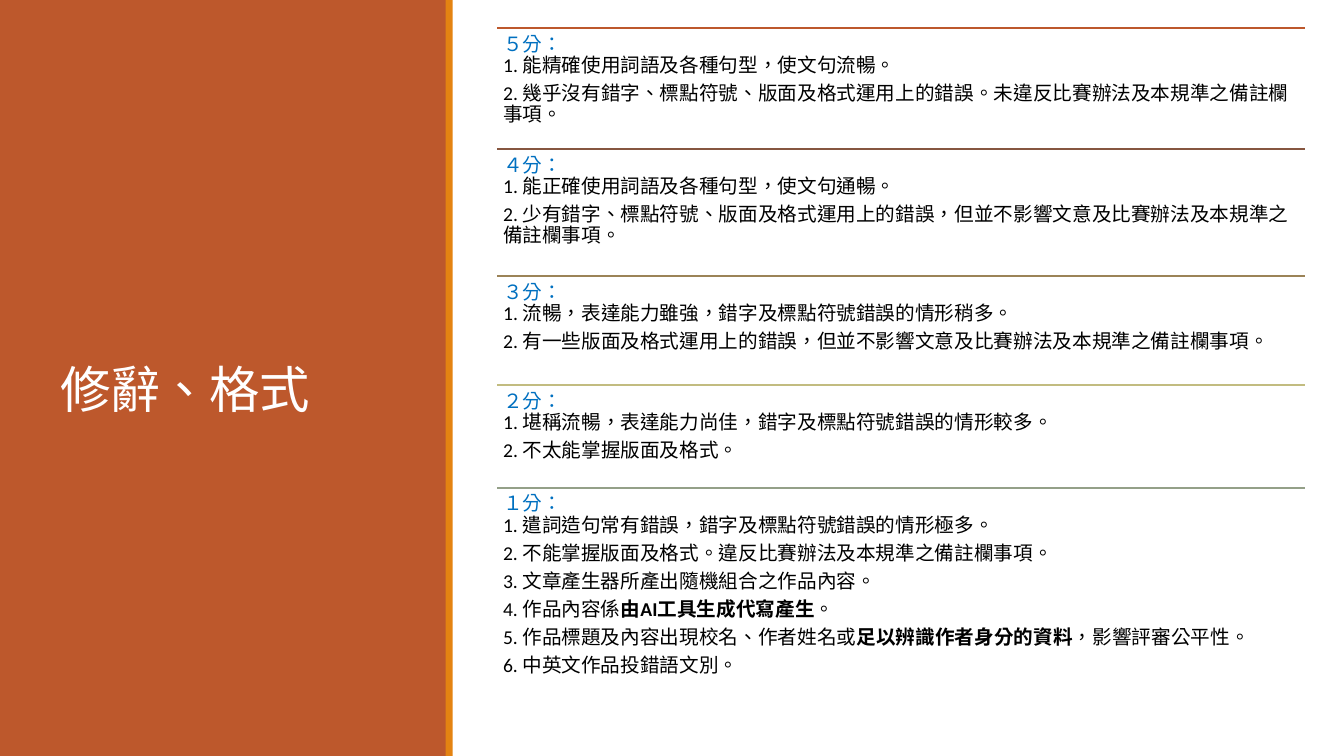
from dataclasses import dataclass

from lxml.etree import SubElement
from pptx import Presentation
from pptx.dml.color import RGBColor
from pptx.enum.shapes import MSO_CONNECTOR, MSO_SHAPE
from pptx.enum.text import MSO_ANCHOR
from pptx.oxml.ns import qn
from pptx.slide import Slide
from pptx.util import Emu, Pt

EMU_PER_PX = 9144
SLIDE_WIDTH, SLIDE_HEIGHT = 1333, 750
COLUMN_LEFT, COLUMN_RIGHT = 493, 1294
INSET = 6
BODY_SIZE = 14
CJK_FONT = "Noto Sans CJK SC"
BODY_FONT = "Calibri"
BOLD_MARK = "*"
COLORS = {
    "panel": "BD582C",
    "stripe": "E48312",
    "title": "FFFFFF",
    "heading": "0070C0",
    "body": "000000",
    "score5": "BD582C",
    "score4": "865640",
    "score3": "9B8357",
    "score2": "C2BC80",
    "score1": "94A088",
}


@dataclass
class Band:
    left: int
    width: int
    color: str


@dataclass
class ScoreLevel:
    top: int
    height: int
    color: str
    heading: str
    criteria: list[str]
    width: int = COLUMN_RIGHT - COLUMN_LEFT


BANDS = [Band(0, 443, "panel"), Band(442, 7, "stripe")]
SCORE_LEVELS = [
    ScoreLevel(28, 120, "score5", "５分：", [
        "能精確使用詞語及各種句型，使文句流暢。",
        "幾乎沒有錯字、標點符號、版面及格式運用上的錯誤。未違反比賽辦法及本規準之備註欄事項。",
    ]),
    ScoreLevel(148, 127, "score4", "４分：", [
        "能正確使用詞語及各種句型，使文句通暢。",
        "少有錯字、標點符號、版面及格式運用上的錯誤，但並不影響文意及比賽辦法及本規準之備註欄事項。",
    ]),
    ScoreLevel(274, 108, "score3", "３分：", [
        "流暢，表達能力雖強，錯字及標點符號錯誤的情形稍多。",
        "有一些版面及格式運用上的錯誤，但並不影響文意及比賽辦法及本規準之備註欄事項。",
    ]),
    ScoreLevel(382, 102, "score2", "２分：", [
        "堪稱流暢，表達能力尚佳，錯字及標點符號錯誤的情形較多。",
        "不太能掌握版面及格式。",
    ]),
    ScoreLevel(484, 217, "score1", "１分：", [
        "遣詞造句常有錯誤，錯字及標點符號錯誤的情形極多。",
        "不能掌握版面及格式。違反比賽辦法及本規準之備註欄事項。",
        "文章產生器所產出隨機組合之作品內容。",
        "作品內容係*由AI工具生成代寫產生*。",
        "作品標題及內容出現校名、作者姓名或*足以辨識作者身分的資料*，影響評審公平性。",
        "中英文作品投錯語文別。",
    ], 776),
]


def px(length: int) -> Emu:
    return Emu(length * EMU_PER_PX)


def rgb(name: str) -> RGBColor:
    return RGBColor.from_string(COLORS[name])


def format_run(run, size: int, font: str, color: str) -> None:
    run.font.size = Pt(size)
    run.font.name = font
    run.font.color.rgb = rgb(color)
    properties = run.font._element
    properties.set("lang", "zh-TW")
    SubElement(properties, qn("a:ea"), typeface=CJK_FONT)


def draw_band(slide: Slide, band: Band) -> None:
    shape = slide.shapes.add_shape(
        MSO_SHAPE.RECTANGLE, px(band.left), 0, px(band.width), px(SLIDE_HEIGHT))
    shape.shadow.inherit = False
    shape.fill.solid()
    shape.fill.fore_color.rgb = rgb(band.color)
    shape.line.fill.background()


def draw_title(slide: Slide, title: str) -> None:
    shape = slide.shapes.add_textbox(px(50), px(65), px(350), px(649))
    text_frame = shape.text_frame
    text_frame.word_wrap = True
    text_frame.vertical_anchor = MSO_ANCHOR.MIDDLE
    text_frame.text = title
    paragraph = text_frame.paragraphs[0]
    paragraph.line_spacing = 0.85
    run = paragraph.runs[0]
    format_run(run, 36, CJK_FONT, "title")
    run.font._element.set("spc", "-50")


def draw_rule(slide: Slide, level: ScoreLevel) -> None:
    rule = slide.shapes.add_connector(
        MSO_CONNECTOR.STRAIGHT,
        px(COLUMN_LEFT), px(level.top), px(COLUMN_RIGHT), px(level.top))
    rule.line.color.rgb = rgb(level.color)
    rule.line.width = Pt(1.25)
    SubElement(rule._element.spPr, qn("a:effectLst"))


def write_criterion(paragraph, number: int, criterion: str, heading: str) -> None:
    paragraph.line_spacing = 0.9
    paragraph.space_after = Pt(4.9)
    if number == 1:
        paragraph.text = f"{heading}\v"
        format_run(paragraph.runs[0], BODY_SIZE, CJK_FONT, "heading")
        line_break = paragraph._p.find(qn("a:br"))
        SubElement(line_break, qn("a:rPr"), sz=str(BODY_SIZE * 100))
    for index, part in enumerate(f"{number}. {criterion}".split(BOLD_MARK)):
        run = paragraph.add_run()
        run.text = part
        format_run(run, BODY_SIZE, BODY_FONT, "body")
        run.font.bold = index % 2 == 1


def draw_level(slide: Slide, level: ScoreLevel) -> None:
    draw_rule(slide, level)
    shape = slide.shapes.add_textbox(
        px(COLUMN_LEFT), px(level.top), px(level.width), px(level.height))
    text_frame = shape.text_frame
    text_frame.word_wrap = True
    text_frame.margin_left = text_frame.margin_right = px(INSET)
    text_frame.margin_top = text_frame.margin_bottom = px(INSET)
    for number, criterion in enumerate(level.criteria, start=1):
        paragraph = text_frame.paragraphs[0] if number == 1 else text_frame.add_paragraph()
        write_criterion(paragraph, number, criterion, level.heading)


def main() -> None:
    presentation = Presentation()
    presentation.slide_width = px(SLIDE_WIDTH)
    presentation.slide_height = px(SLIDE_HEIGHT)
    slide = presentation.slides.add_slide(presentation.slide_layouts[6])
    for band in BANDS:
        draw_band(slide, band)
    draw_title(slide, "修辭、格式")
    for level in SCORE_LEVELS:
        draw_level(slide, level)
    presentation.save("out.pptx")


if __name__ == "__main__":
    main()
